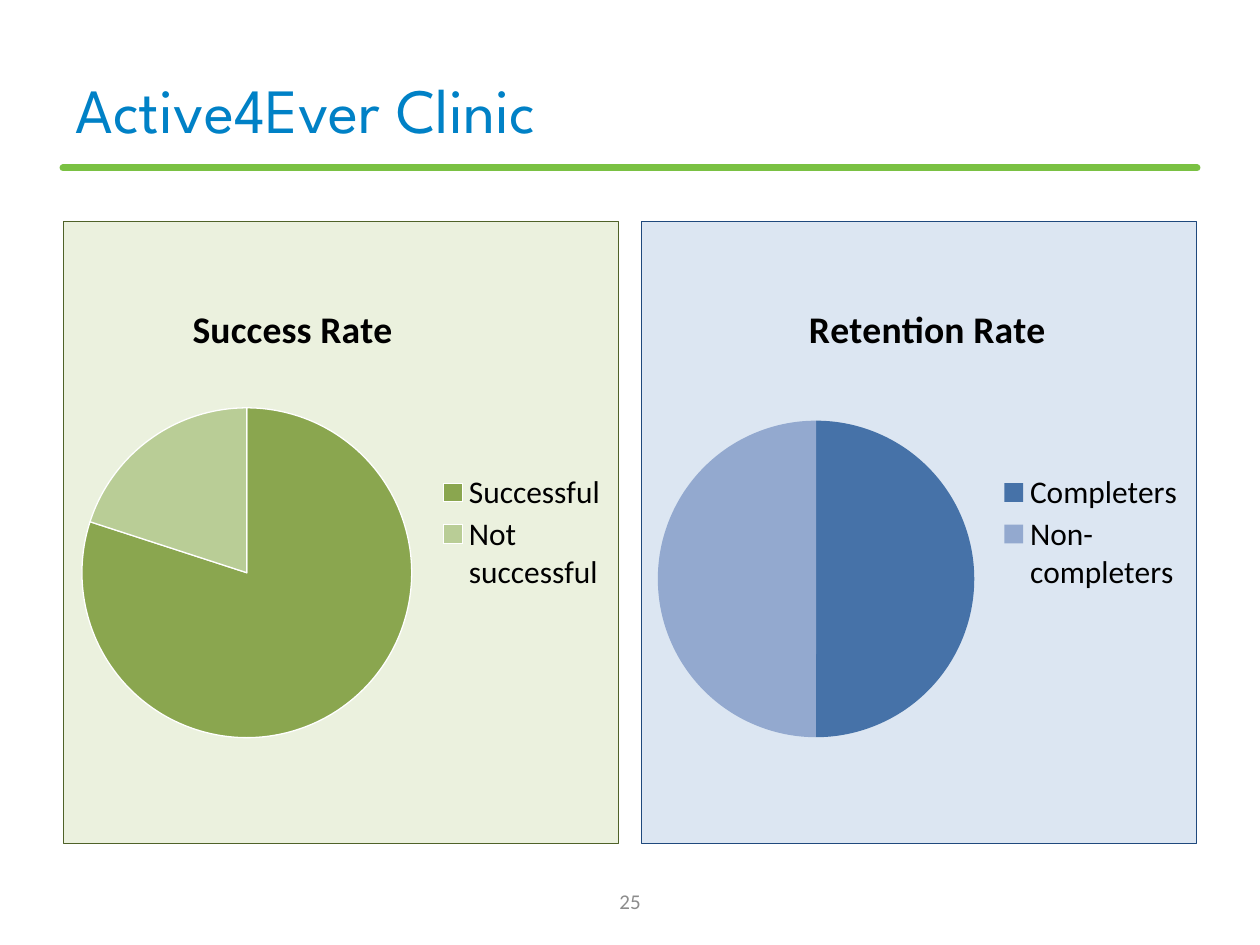
import pptx
import pptx.chart.data
import pptx.dml.color
import pptx.enum.chart
import pptx.enum.shapes
import pptx.enum.text
import pptx.oxml
import pptx.oxml.ns
import pptx.util

Pt = pptx.util.Pt
RGBColor = pptx.dml.color.RGBColor
qn = pptx.oxml.ns.qn

TITLE_BLUE = RGBColor(0x00, 0x81, 0xC6)
RULE_GREEN = RGBColor(0x7A, 0xC1, 0x43)
NUMBER_GRAY = RGBColor(0x8C, 0x8C, 0x8C)
BLACK = RGBColor(0x00, 0x00, 0x00)
WHITE = RGBColor(0xFF, 0xFF, 0xFF)
GREEN = RGBColor(0x8A, 0xA6, 0x4F)
LIGHT_GREEN = RGBColor(0xB9, 0xCD, 0x96)
GREEN_PANEL = RGBColor(0xEB, 0xF1, 0xDE)
GREEN_BORDER = RGBColor(0x4F, 0x62, 0x28)
BLUE = RGBColor(0x46, 0x72, 0xA8)
LIGHT_BLUE = RGBColor(0x93, 0xA9, 0xCF)
BLUE_PANEL = RGBColor(0xDC, 0xE6, 0xF2)
BLUE_BORDER = RGBColor(0x1F, 0x49, 0x7D)

MARGIN = 36
CONTENT_WIDTH = 648
PANEL_GAP = 12
PANEL_WIDTH = (CONTENT_WIDTH - PANEL_GAP) / 2


def format_text(paragraph, name, size, color, bold=False):
    for run in paragraph.runs:
        run.font.name = name
        run.font.size = Pt(size)
        run.font.color.rgb = color
        run.font.bold = bold


def add_title(slide, text):
    title = slide.shapes.title
    title.left, title.top = Pt(MARGIN), Pt(36)
    title.width, title.height = Pt(CONTENT_WIDTH), Pt(52)
    title.text_frame.text = text
    title.text_frame.vertical_anchor = pptx.enum.text.MSO_ANCHOR.MIDDLE
    paragraph = title.text_frame.paragraphs[0]
    paragraph.alignment = pptx.enum.text.PP_ALIGN.LEFT
    format_text(paragraph, "League Spartan", 36, TITLE_BLUE)


def add_rule(slide):
    rule = slide.shapes.add_connector(
        pptx.enum.shapes.MSO_CONNECTOR.STRAIGHT,
        Pt(MARGIN), Pt(96), Pt(MARGIN + CONTENT_WIDTH), Pt(96))
    rule.line.color.rgb = RULE_GREEN
    rule.line.width = Pt(4)
    properties = rule._element.spPr
    properties.find(qn("a:ln")).set("cap", "rnd")
    properties.append(pptx.oxml.parse_xml(
        f'<a:effectLst {pptx.oxml.ns.nsdecls("a")}/>'))


def add_page_number(slide, text):
    box = slide.shapes.add_textbox(Pt(276), Pt(500.5), Pt(168), Pt(28.75))
    frame = box.text_frame
    frame.word_wrap = True
    frame.vertical_anchor = pptx.enum.text.MSO_ANCHOR.MIDDLE
    frame.text = text
    frame.paragraphs[0].alignment = pptx.enum.text.PP_ALIGN.CENTER
    format_text(frame.paragraphs[0], "Calibri", 12, NUMBER_GRAY)


def place_part(part, index, target, **fractions):
    old_layout = part.find(qn("c:layout"))
    if old_layout is not None:
        part.remove(old_layout)
    modes = "".join(f'<c:{axis}Mode val="edge"/>' for axis in "xy")
    values = "".join(f'<c:{key} val="{value}"/>' for key, value in fractions.items())
    inner = '<c:layoutTarget val="inner"/>' if target else ""
    part.insert(index, pptx.oxml.parse_xml(
        f'<c:layout {pptx.oxml.ns.nsdecls("c")}><c:manualLayout>'
        f'{inner}{modes}{values}</c:manualLayout></c:layout>'))


def fill_panel(chart, fill, border):
    chart.element.find(qn("c:chart")).addnext(pptx.oxml.parse_xml(
        f'<c:spPr {pptx.oxml.ns.nsdecls("c", "a")}>'
        f'<a:solidFill><a:srgbClr val="{fill}"/></a:solidFill>'
        f'<a:ln w="{Pt(0.75)}"><a:solidFill><a:srgbClr val="{border}"/></a:solidFill></a:ln>'
        '</c:spPr>'))


def add_pie(slide, column, name, values, colors, panel, outline, title_x, plot, legend_x):
    data = pptx.chart.data.CategoryChartData()
    data.categories = list(values)
    data.add_series(name, list(values.values()))
    chart = slide.shapes.add_chart(
        pptx.enum.chart.XL_CHART_TYPE.PIE,
        Pt(MARGIN + column * (PANEL_WIDTH + PANEL_GAP)), Pt(126),
        Pt(PANEL_WIDTH), Pt(356.4), data).chart
    chart.font.name = "Calibri"
    chart.font.size = Pt(18)
    chart.font.color.rgb = BLACK
    fill_panel(chart, *panel)

    chart.has_title = True
    chart.chart_title.text_frame.text = name
    format_text(chart.chart_title.text_frame.paragraphs[0], "Calibri", 21.6, BLACK, True)
    chart.has_legend = True
    chart.legend.position = pptx.enum.chart.XL_LEGEND_POSITION.RIGHT
    chart.legend.include_in_layout = False

    chart.plots[0].vary_by_categories = True
    for index, color in enumerate(colors):
        point = chart.plots[0].series[0].points[index].format
        point.fill.solid()
        point.fill.fore_color.rgb = color
        if outline:
            point.line.color.rgb = outline
            point.line.width = Pt(0.75)
        else:
            point.line.fill.background()

    body = chart.element.find(qn("c:chart"))
    place_part(body.find(qn("c:title")), 1, False, x=title_x, y=0.12)
    place_part(body.find(qn("c:plotArea")), 0, True, **plot)
    place_part(body.find(qn("c:legend")), 1, False,
               x=legend_x, y=0.4, w=round(0.98 - legend_x, 2), h=0.2)


def main():
    presentation = pptx.Presentation()
    presentation.slide_width, presentation.slide_height = Pt(720), Pt(540)
    slide = presentation.slides.add_slide(presentation.slide_layouts[5])
    add_title(slide, "Active4Ever Clinic")
    add_rule(slide)
    add_pie(slide, 0, "Success Rate", {"Successful": 80, "Not successful": 20},
            (GREEN, LIGHT_GREEN), (GREEN_PANEL, GREEN_BORDER), WHITE,
            0.22, {"x": 0.03, "y": 0.3, "w": 0.6, "h": 0.53}, 0.67)
    add_pie(slide, 1, "Retention Rate", {"Completers": 50, "Non-completers": 50},
            (BLUE, LIGHT_BLUE), (BLUE_PANEL, BLUE_BORDER), None,
            0.29, {"x": 0.03, "y": 0.32, "w": 0.57, "h": 0.51}, 0.64)
    add_page_number(slide, "25")
    presentation.save("out.pptx")


if __name__ == "__main__":
    main()
